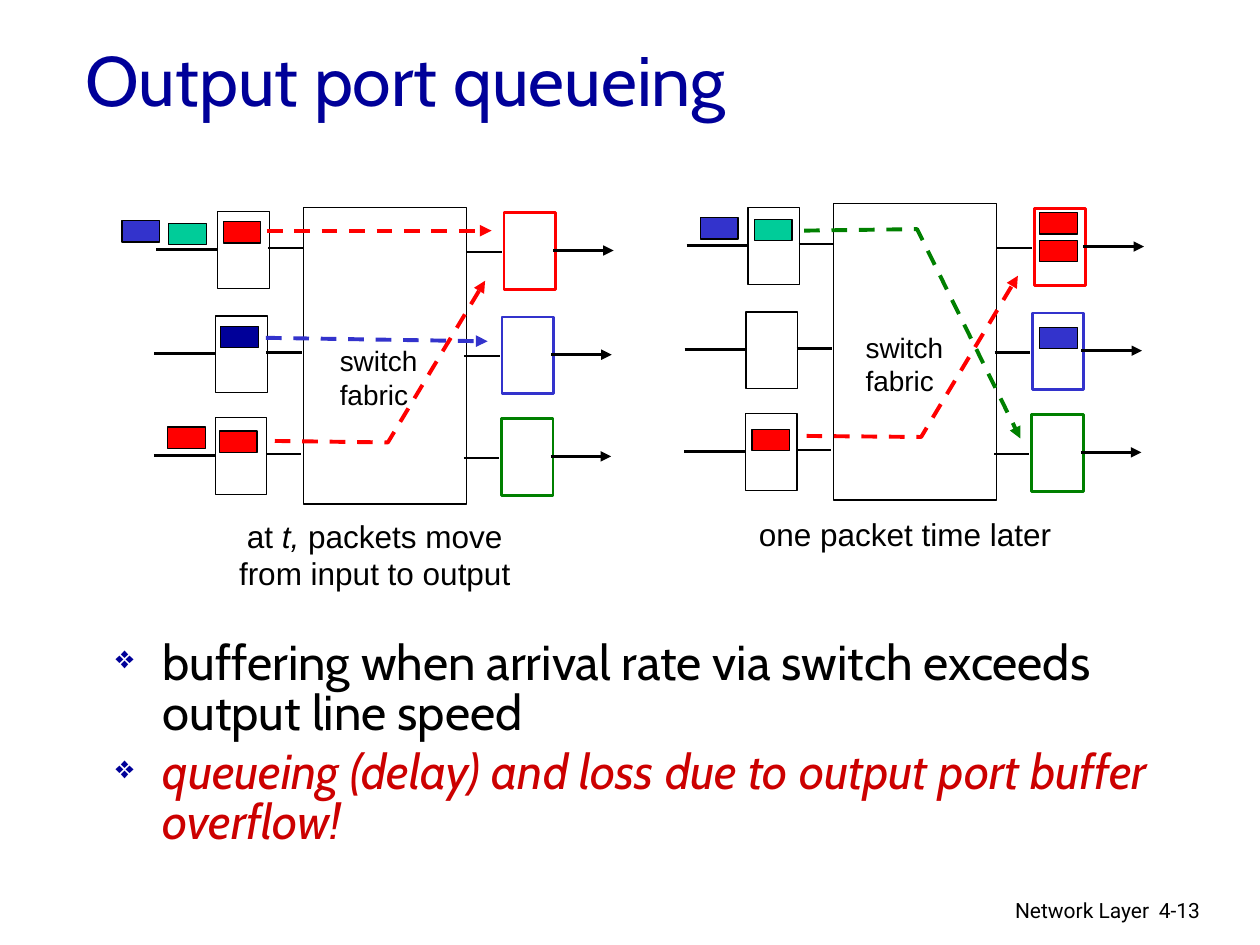
from lxml import etree
from pptx import Presentation
from pptx import util as u
from pptx.dml.color import RGBColor
from pptx.enum import dml, shapes, text
from pptx.oxml.ns import qn

BLACK = RGBColor(0x00, 0x00, 0x00)
WHITE = RGBColor(0xFF, 0xFF, 0xFF)
NAVY = RGBColor(0x00, 0x00, 0x99)
BLUE = RGBColor(0x33, 0x33, 0xCC)
RED = RGBColor(0xFF, 0x00, 0x00)
DARK_RED = RGBColor(0xCC, 0x00, 0x00)
GREEN = RGBColor(0x00, 0x80, 0x00)
TEAL = RGBColor(0x00, 0xCC, 0x99)

ROWS = [(0, 0, RED), (-0.04, 2.1, BLUE), (-0.05, 4.15, GREEN)]
WIRES = [
    (-2.97, -1.73, 0.84, False),
    (-0.71, 0, 0.81, False),
    (3.28, 3.99, 0.89, False),
    (5.03, 6.25, 0.86, True),
]
PACKETS = [
    (4.5, 4.47, RED), (4.45, 6.58, NAVY), (4.42, 8.69, RED),
    (3.4, 4.5, TEAL), (3.38, 8.61, RED), (2.46, 4.45, BLUE),
    (20.96, 4.29, RED), (20.96, 4.85, RED), (20.96, 6.6, BLUE),
    (15.21, 4.42, TEAL), (15.16, 8.66, RED), (14.12, 4.39, BLUE),
]
ROUTES = [
    (RED, [(5.54, 8.89), (7.82, 8.92), (9.78, 5.66)]),
    (RED, [(16.26, 8.79), (18.57, 8.81), (20.52, 5.56)]),
    (GREEN, [(16.21, 4.65), (18.49, 4.62), (20.57, 8.84)]),
]


class SlideBuilder:
    def __init__(self, page):
        self.page = page
        self.display_font = "Cabin"
        self.label_font = "Arial"
        self.footer_font = "Roboto"

    def span(self, para, words, font, size, color=BLACK, italic=False):
        span = para.add_run()
        span.text = words
        span.font.name = font
        span.font.size = u.Pt(size)
        span.font.color.rgb = color
        span.font.italic = italic

    def title(self, words, left, top, width, height):
        box = self.page.shapes.title
        box.left, box.top = u.Cm(left), u.Cm(top)
        box.width, box.height = u.Cm(width), u.Cm(height)
        frame = box.text_frame
        frame.auto_size = text.MSO_AUTO_SIZE.NONE
        frame.vertical_anchor = text.MSO_ANCHOR.MIDDLE
        para = frame.paragraphs[0]
        para.alignment = text.PP_ALIGN.LEFT
        self.span(para, words, self.display_font, 40, NAVY)

    def text_box(self, left, top, width, height, lines, font, size,
                 align=text.PP_ALIGN.LEFT, wrap=True):
        box = self.page.shapes.add_textbox(
            u.Cm(left), u.Cm(top), u.Cm(width), u.Cm(height))
        frame = box.text_frame
        frame.word_wrap = wrap
        for index, line in enumerate(lines):
            para = frame.add_paragraph() if index else frame.paragraphs[0]
            para.alignment = align
            for words, color, italic in line:
                self.span(para, words, font, size, color, italic)
        return box

    def bullets(self, left, top, width, height, lines):
        box = self.text_box(left, top, width, height, lines,
                            self.display_font, 28)
        for para in box.text_frame.paragraphs:
            para.line_spacing = 0.85
            para.space_before = u.Pt(5.6)
            props = para._p.get_or_add_pPr()
            props.set("marL", str(u.Cm(0.95)))
            props.set("indent", str(-u.Cm(0.95)))
            color = etree.SubElement(props, qn("a:buClr"))
            etree.SubElement(color, qn("a:srgbClr"), val=str(NAVY))
            etree.SubElement(props, qn("a:buSzPct"), val="65000")
            etree.SubElement(props, qn("a:buChar"), char="❖")

    def rect(self, left, top, width, height, fill=WHITE, color=BLACK,
             weight=0.75):
        box = self.page.shapes.add_shape(
            shapes.MSO_SHAPE.RECTANGLE,
            u.Cm(left), u.Cm(top), u.Cm(width), u.Cm(height))
        box.shadow.inherit = False
        box.fill.solid()
        box.fill.fore_color.rgb = fill
        box.line.color.rgb = color
        box.line.width = u.Pt(weight)

    def stroke(self, line, color, weight, dashed, arrow):
        line.color.rgb = color
        line.width = u.Pt(weight)
        if dashed:
            line.dash_style = dml.MSO_LINE.DASH
        if arrow:
            etree.SubElement(line._get_or_add_ln(), qn("a:tailEnd"),
                             type="triangle")

    def line(self, start, end, color=BLACK, weight=1.5, dashed=False,
             arrow=False):
        wire = self.page.shapes.add_connector(
            shapes.MSO_CONNECTOR.STRAIGHT,
            *(u.Cm(value) for value in (*start, *end)))
        self.stroke(wire.line, color, weight, dashed, arrow)
        etree.SubElement(wire._element.spPr, qn("a:effectLst"))

    def route(self, color, points):
        start, *rest = [(u.Cm(x), u.Cm(y)) for x, y in points]
        outline = self.page.shapes.build_freeform(*start)
        outline.add_line_segments(rest, close=False)
        path_shape = outline.convert_to_shape()
        path_shape.shadow.inherit = False
        path_shape.fill.background()
        self.stroke(path_shape.line, color, 2.25, True, True)

    def switch(self, left, top):
        self.rect(left, top, 3.28, 5.97)
        for shift, drop, color in ROWS:
            x, y = left + shift, top + drop
            self.rect(x - 1.73, y + 0.08, 1.04, 1.55)
            self.rect(x + 4.04, y + 0.1, 1.04, 1.55, color=color, weight=1.5)
            for begin, end, depth, arrow in WIRES:
                self.line((x + begin, y + depth), (x + end, y + depth),
                          arrow=arrow)


def plain(*lines):
    return [[(line, BLACK, False)] for line in lines]


def main():
    deck = Presentation()
    deck.slide_width, deck.slide_height = u.Cm(25.4), u.Cm(19.05)
    builder = SlideBuilder(deck.slides.add_slide(deck.slide_layouts[5]))
    center, right = text.PP_ALIGN.CENTER, text.PP_ALIGN.RIGHT

    builder.title("Output port queueing", 1.47, 0.56, 21.59, 2.03)
    builder.bullets(2.08, 12.78, 21.59, 3.3, [
        [("buffering when arrival rate via switch exceeds output line speed",
          BLACK, False)],
        [("queueing (delay) and loss due to output port buffer overflow!",
          DARK_RED, True)],
    ])

    for left, top in [(6.12, 4.19), (16.81, 4.11)]:
        builder.switch(left, top)
    for left, top in [(6.6, 6.81), (17.2, 6.53)]:
        builder.text_box(left, top, 2.08, 1.63, plain("switch", "fabric"),
                         builder.label_font, 16, wrap=False)
    for left, top, fill in PACKETS:
        builder.rect(left, top, 0.76, 0.43, fill)
    builder.line((5.38, 4.65), (9.91, 4.65), RED, 2.25, True, True)
    builder.line((5.36, 6.81), (9.83, 6.88), BLUE, 2.25, True, True)
    for color, points in ROUTES:
        builder.route(color, points)

    moving = [("at ", BLACK, False), ("t, ", BLACK, True),
              ("packets move", BLACK, False)]
    builder.text_box(4.14, 10.29, 6.83, 1.78,
                     [moving] + plain("from input to output"),
                     builder.label_font, 18, center)
    builder.text_box(14.83, 10.26, 6.83, 1.02,
                     plain("one packet time later"),
                     builder.label_font, 18, center)
    builder.text_box(15.37, 17.96, 8.05, 0.79, plain("Network Layer"),
                     builder.footer_font, 12, right)
    builder.text_box(23.11, 17.96, 1.88, 0.76, plain("4-13"),
                     builder.footer_font, 12)
    deck.save("out.pptx")


if __name__ == "__main__":
    main()
